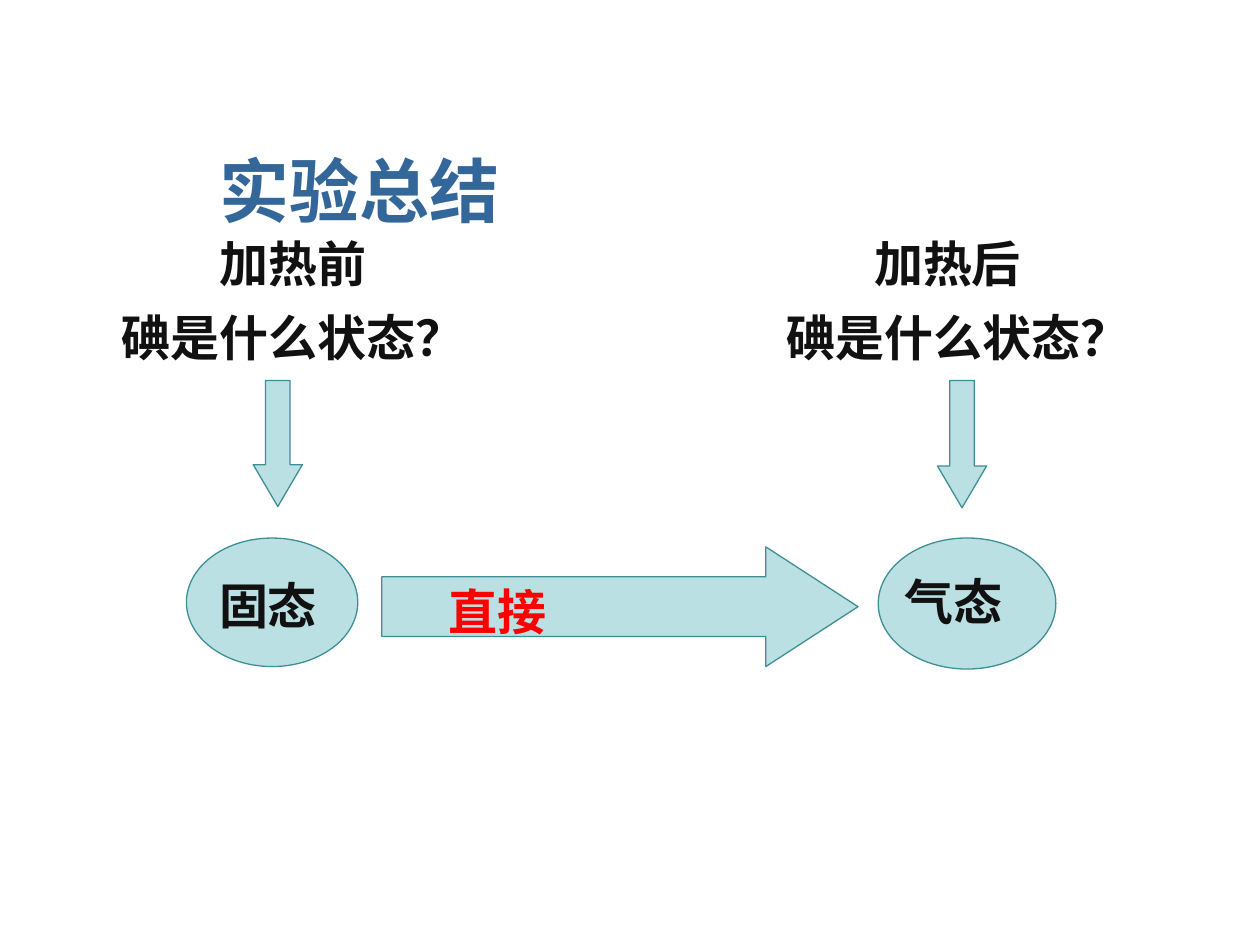
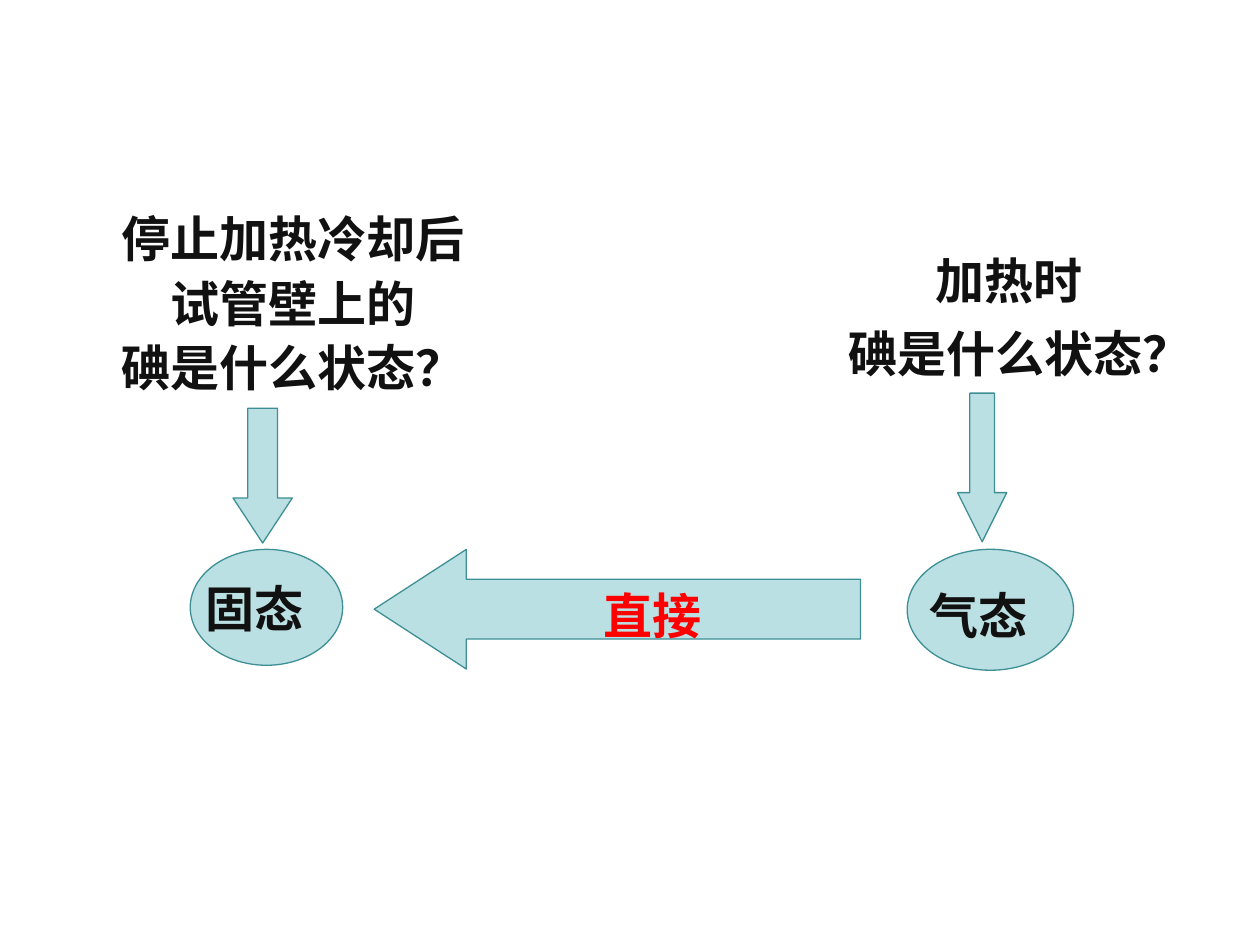
from dataclasses import dataclass

from pptx import Presentation, dml, util as u
from pptx.dml import color
from pptx.enum import shapes, text
from pptx.oxml import ns

SHAPE = shapes.MSO_SHAPE
CENTER, LEFT = text.PP_ALIGN.CENTER, text.PP_ALIGN.LEFT


@dataclass(frozen=True)
class Theme:
    font: str = "Noto Sans CJK SC"
    fill: str = "BBE0E3"
    outline: str = "3D8F95"
    ink: str = "111111"
    accent: str = "FF0000"
    title: str = "336699"
    body_size: int = 28
    title_size: int = 40
    outline_width: float = 0.75


THEME = Theme()
QUESTION = "碘是什么状态？"

# Content: places are (left, top, width, height) in inches.
# A branch is a question, a down arrow with its head ratio, and a state.
SLIDES = [
    {
        "title": ("实验总结", (1.74, 1.12, 2.22, 0.48)),
        "branches": [
            {"lines": ["加热前", QUESTION], "question_at": (0.59, 1.69, 3.47, 1.2),
             "spacing": 1.25, "shift": 0,
             "arrow_at": (2.01, 3.02, 0.39, 1), "head": 0.85,
             "oval_at": (1.48, 4.27, 1.36, 1.02),
             "state": "固态", "state_at": (1.64, 4.52, 1.55, 0.57)},
            {"lines": ["加热后", QUESTION], "question_at": (5.63, 1.69, 3.78, 1.2),
             "spacing": 1.25, "shift": 0.17,
             "arrow_at": (7.44, 3.02, 0.39, 1.01), "head": 0.85,
             "oval_at": (6.97, 4.27, 1.41, 1.04),
             "state": "气态", "state_at": (7.08, 4.49, 1.47, 0.57)},
        ],
        "change": {"shape": SHAPE.RIGHT_ARROW, "at": (3.03, 4.34, 3.78, 0.95),
                   "label": "直接", "label_at": (3.46, 4.57, 2.27, 0.57)},
    },
    {
        "title": None,
        "branches": [
            {"lines": ["停止加热冷却后", "试管壁上的", QUESTION],
             "question_at": (0.67, 1.56, 3.31, 1.66),
             "spacing": 1.1, "shift": 0,
             "arrow_at": (1.85, 3.24, 0.47, 1.07), "head": 0.76,
             "oval_at": (1.51, 4.36, 1.21, 0.92),
             "state": "固态", "state_at": (1.53, 4.54, 1.15, 0.57)},
            {"lines": ["加热时", QUESTION], "question_at": (6.1, 1.82, 3.82, 1.2),
             "spacing": 1.25, "shift": 0.17,
             "arrow_at": (7.6, 3.12, 0.39, 1.18), "head": 1,
             "oval_at": (7.2, 4.36, 1.32, 0.96),
             "state": "气态", "state_at": (7.28, 4.6, 1.18, 0.57)},
        ],
        "change": {"shape": SHAPE.LEFT_ARROW, "at": (2.97, 4.36, 3.86, 0.95),
                   "label": "直接", "label_at": (4.69, 4.6, 1.1, 0.57)},
    },
]
CHANGE_HEAD = 0.77


def rgb(value):
    return color.RGBColor.from_string(value)


def inches(place):
    return [u.Inches(length) for length in place]


def add_figure(page, kind, place, head=None):
    """Draw a filled preset shape; head sets the length of an arrowhead."""
    figure = page.shapes.add_shape(kind, *inches(place))
    figure.shadow.inherit = False
    figure.fill.solid()
    figure.fill.fore_color.rgb = rgb(THEME.fill)
    figure.line.color.rgb = rgb(THEME.outline)
    figure.line.width = u.Pt(THEME.outline_width)
    if head is not None:
        figure.adjustments[0], figure.adjustments[1] = 0.5, head


def add_text(page, lines, place, ink=THEME.ink, size=THEME.body_size,
             align=LEFT, spacing=1.0, shift=0, wrap=True):
    """Write bold lines; shift indents every line after the first."""
    frame = page.shapes.add_textbox(*inches(place)).text_frame
    frame.word_wrap = wrap
    frame.auto_size = (text.MSO_AUTO_SIZE.SHAPE_TO_FIT_TEXT if wrap
                       else text.MSO_AUTO_SIZE.NONE)
    font_format = {"name": THEME.font, "size": u.Pt(size), "bold": True}
    for index, line in enumerate(lines):
        para = frame.add_paragraph() if index else frame.paragraphs[0]
        for name, value in {"alignment": align, "line_spacing": spacing}.items():
            setattr(para, name, value)
        if index and shift:
            para._p.get_or_add_pPr().set("marL", str(u.Inches(shift)))
        span = para.add_run()
        span.text = line
        for name, value in font_format.items():
            setattr(span.font, name, value)
        span.font.color.rgb = rgb(ink)
        # East Asian glyphs take their own typeface element
        east_asian = span.font._element.makeelement(
            ns.qn("a:ea"), {"typeface": THEME.font})
        span.font._element.append(east_asian)


def add_branch(page, branch):
    add_text(page, branch["lines"], branch["question_at"], align=CENTER,
             spacing=branch["spacing"], shift=branch["shift"])
    add_figure(page, SHAPE.DOWN_ARROW, branch["arrow_at"], branch["head"])
    add_figure(page, SHAPE.OVAL, branch["oval_at"])
    add_text(page, [branch["state"]], branch["state_at"])


def main():
    deck = Presentation()
    deck.slide_width, deck.slide_height = u.Inches(10), u.Inches(7.5)
    for content in SLIDES:
        page = deck.slides.add_slide(deck.slide_layouts[6])

        # Questions leading down to the two states
        for branch in content["branches"]:
            add_branch(page, branch)

        # Direct change between the states
        change = content["change"]
        add_figure(page, change["shape"], change["at"], CHANGE_HEAD)
        add_text(page, [change["label"]], change["label_at"], ink=THEME.accent)

        # Heading
        if content["title"]:
            heading, place = content["title"]
            add_text(page, [heading], place, ink=THEME.title,
                     size=THEME.title_size, align=CENTER, wrap=False)
    deck.save("out.pptx")


if __name__ == "__main__":
    main()
